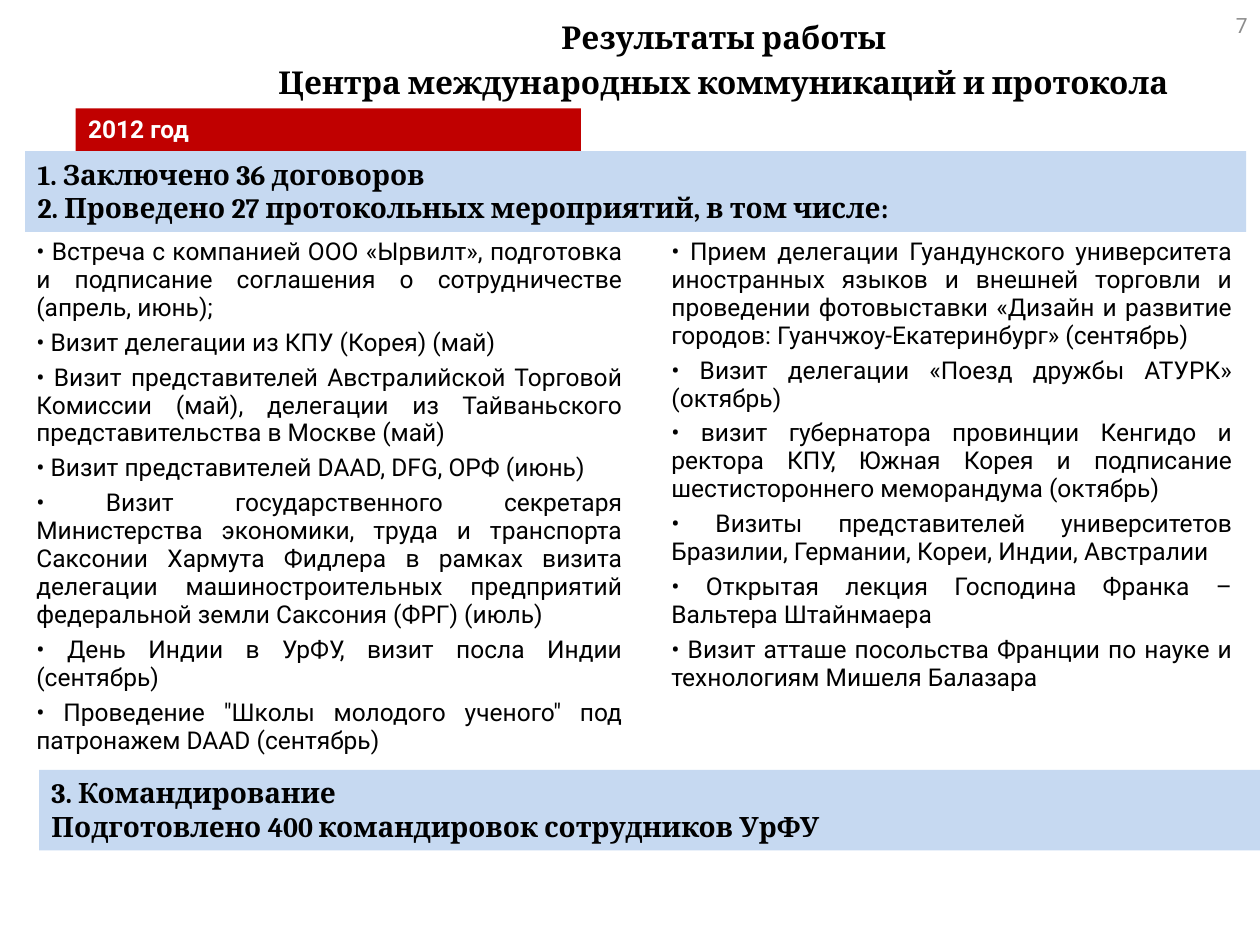
from dataclasses import dataclass

from pptx import Presentation
from pptx.dml.color import RGBColor
from pptx.enum.shapes import MSO_SHAPE
from pptx.enum.text import MSO_ANCHOR, PP_ALIGN
from pptx.util import Inches, Pt


@dataclass(frozen=True)
class Theme:
    heading_font: str = "Cambria"
    body_font: str = "Roboto"
    black: RGBColor = RGBColor(0, 0, 0)
    white: RGBColor = RGBColor(255, 255, 255)
    gray: RGBColor = RGBColor(0x8C, 0x8C, 0x8C)
    red: RGBColor = RGBColor(0xC0, 0, 0)
    light_blue: RGBColor = RGBColor(0xC6, 0xD9, 0xF1)
    title_size: int = 18
    band_size: int = 16
    body_size: int = 14
    number_size: int = 12


THEME = Theme()

LEFT_EVENTS = [
    "Встреча с компанией ООО «Ырвилт», подготовка и подписание соглашения "
    "о сотрудничестве (апрель, июнь);",
    "Визит делегации из КПУ (Корея) (май)",
    "Визит представителей Австралийской Торговой Комиссии (май), делегации "
    "из Тайваньского представительства в Москве (май)",
    "Визит представителей DAAD, DFG, ОРФ (июнь)",
    "Визит государственного секретаря Министерства экономики, труда и "
    "транспорта Саксонии Хармута Фидлера в рамках визита делегации "
    "машиностроительных предприятий федеральной земли Саксония (ФРГ) (июль)",
    "День Индии в УрФУ, визит посла Индии (сентябрь)",
    "Проведение \"Школы молодого ученого\" под патронажем DAAD (сентябрь)",
]
RIGHT_EVENTS = [
    "Прием делегации Гуандунского университета иностранных языков и внешней "
    "торговли и проведении фотовыставки «Дизайн и развитие городов: "
    "Гуанчжоу-Екатеринбург» (сентябрь)",
    "Визит делегации «Поезд дружбы АТУРК» (октябрь)",
    "визит губернатора провинции Кенгидо и ректора КПУ, Южная Корея и "
    "подписание шестистороннего меморандума (октябрь)",
    "Визиты представителей университетов Бразилии, Германии, Кореи, Индии, "
    "Австралии",
    "Открытая лекция Господина Франка – Вальтера Штайнмаера",
    "Визит атташе посольства Франции по науке и технологиям Мишеля Балазара",
]


def write_text(shape, lines, *, size, font=THEME.body_font, color=THEME.black,
               bold=False, align=PP_ALIGN.LEFT, anchor=MSO_ANCHOR.TOP,
               line_spacing=1.0, space_after=0, indent=0):
    """Fill a shape with one paragraph per line, all in one format."""
    frame = shape.text_frame
    frame.word_wrap = True
    frame.vertical_anchor = anchor
    for index, line in enumerate(lines):
        paragraph = frame.paragraphs[0] if index == 0 else frame.add_paragraph()
        paragraph.alignment = align
        paragraph.line_spacing = line_spacing
        paragraph.space_after = Pt(space_after)
        if indent:
            properties = paragraph._p.get_or_add_pPr()
            properties.set("marL", str(Inches(indent)))
            properties.set("indent", "0")
        run = paragraph.add_run()
        run.text = line
        run.font.name = font
        run.font.size = Pt(size)
        run.font.bold = bold
        run.font.color.rgb = color


def add_text(slide, box, lines, **text_format):
    shape = slide.shapes.add_textbox(*map(Inches, box))
    write_text(shape, lines, **text_format)


def add_band(slide, box, lines, fill, **text_format):
    shape = slide.shapes.add_shape(MSO_SHAPE.RECTANGLE, *map(Inches, box))
    shape.shadow.inherit = False
    shape.fill.solid()
    shape.fill.fore_color.rgb = fill
    shape.line.fill.background()
    write_text(shape, lines, bold=True, **text_format)


def add_title(slide, box):
    lines = ["Результаты работы", "Центра международных коммуникаций и протокола"]
    add_text(slide, box, lines, size=THEME.title_size, font=THEME.heading_font,
             bold=True, align=PP_ALIGN.CENTER, line_spacing=0.9, space_after=6)


def add_page_number(slide, box):
    add_text(slide, box, ["7"], size=THEME.number_size, color=THEME.gray,
             align=PP_ALIGN.RIGHT, anchor=MSO_ANCHOR.MIDDLE)


def add_year_label(slide, box):
    add_band(slide, box, ["2012 год"], THEME.red,
             size=THEME.body_size, color=THEME.white)


def add_summary_band(slide, box, lines):
    add_band(slide, box, lines, THEME.light_blue,
             size=THEME.band_size, font=THEME.heading_font)


def add_event_column(slide, box, events):
    add_text(slide, box, [f"• {event}" for event in events],
             size=THEME.body_size, align=PP_ALIGN.JUSTIFY,
             line_spacing=0.95, space_after=4, indent=0.19)


def main():
    presentation = Presentation()
    presentation.slide_width = Inches(10)
    presentation.slide_height = Inches(7.5)
    slide = presentation.slides.add_slide(presentation.slide_layouts[6])

    # Heading
    add_year_label(slide, (0.6, 0.86, 4.01, 0.34))
    add_page_number(slide, (9.49, 0, 0.51, 0.4))
    add_title(slide, (1.61, 0.13, 8.27, 0.73))

    # Contracts and protocol events
    add_summary_band(slide, (0.2, 1.2, 9.69, 0.64), [
        "1. Заключено 36 договоров",
        "2. Проведено 27 протокольных мероприятий, в том числе:",
    ])
    add_event_column(slide, (0, 1.84, 5.04, 4.59), LEFT_EVENTS)
    add_event_column(slide, (5.04, 1.84, 4.84, 4.43), RIGHT_EVENTS)

    # Business trips
    add_summary_band(slide, (0.31, 6.11, 9.69, 0.64), [
        "3. Командирование",
        "Подготовлено 400 командировок сотрудников УрФУ",
    ])

    presentation.save("out.pptx")


if __name__ == "__main__":
    main()
